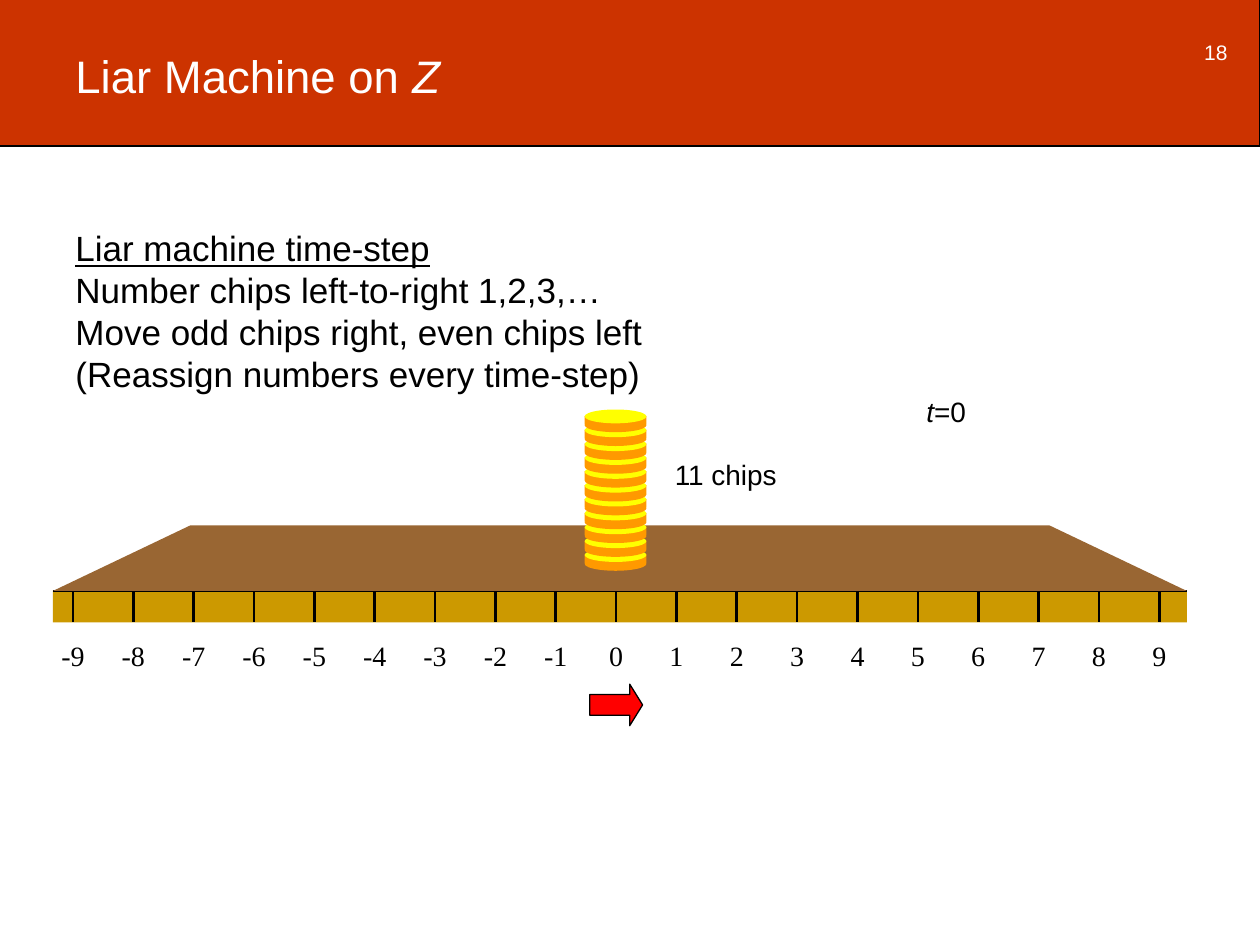
from lxml.etree import SubElement
from pptx import Presentation
from pptx.dml.color import RGBColor
from pptx.enum.shapes import MSO_CONNECTOR, MSO_SHAPE
from pptx.enum.text import MSO_ANCHOR, PP_ALIGN
from pptx.oxml.ns import qn
from pptx.util import Inches, Pt

COLORS = {"banner": "CC3300", "edge": "CC9900", "table": "996633", "chip_side": "FF9900",
          "chip_top": "FFFF00", "arrow": "FF0000", "black": "000000", "white": "FFFFFF"}

presentation = Presentation()
presentation.slide_width, presentation.slide_height = Inches(10), Inches(7.5)
slide = presentation.slides.add_slide(presentation.slide_layouts[6])
shapes = slide.shapes


def paint(shape, fill, outlined=False):
    shape.shadow.inherit = False
    shape.fill.solid()
    shape.fill.fore_color.rgb = RGBColor.from_string(COLORS[fill])
    if outlined:
        shape.line.color.rgb = RGBColor.from_string(COLORS["black"])
        shape.line.width = Pt(0.75)
    else:
        shape.line.fill.background()
    return shape


def add_text(box, lines, size, color="black", font="Arial", align=PP_ALIGN.LEFT,
             anchor=MSO_ANCHOR.TOP, wrap=False):
    """Each line is a list of (text, italic) runs."""
    frame = shapes.add_textbox(*map(Inches, box)).text_frame
    frame.word_wrap = wrap
    frame.vertical_anchor = anchor
    for index, runs in enumerate(lines):
        paragraph = frame.add_paragraph() if index else frame.paragraphs[0]
        paragraph.alignment = align
        paragraph.font.size = Pt(size)
        paragraph.font.name = font
        paragraph.font.color.rgb = RGBColor.from_string(COLORS[color])
        for text, italic in runs:
            run = paragraph.add_run()
            run.text = text
            if italic:
                run.font.italic = True
    return frame


# Banner, title and slide number
banner = shapes.add_shape(MSO_SHAPE.RECTANGLE, Inches(-0.01), Inches(-0.01),
                          Inches(10.01), Inches(1.17))
paint(banner, "banner", outlined=True)
add_text((0.5, 0.33, 7.58, 1), [[("Liar Machine on ", False), ("Z", True)]], 26, "white", wrap=True)
add_text((9.42, 0.15, 0.42, 0.52), [[("18", False)]], 12, "white",
         align=PP_ALIGN.RIGHT, anchor=MSO_ANCHOR.MIDDLE, wrap=True)

# Front edge of the table with its number line
left, right, back, front, bottom = 0.42, 9.42, 4.17, 4.69, 4.94
edge = shapes.add_shape(MSO_SHAPE.RECTANGLE, Inches(left), Inches(front),
                        Inches(right - left), Inches(bottom - front))
paint(edge, "edge")

origin, step = 4.89, 0.479
ticks = [(origin + step * number, number) for number in range(-9, 10)]
rules = [(left, front, right, front)] + [(x, front, x, bottom) for x, number in ticks]
for rule in rules:
    connector = shapes.add_connector(MSO_CONNECTOR.STRAIGHT, *map(Inches, rule))
    connector.line.color.rgb = RGBColor.from_string(COLORS["black"])
    connector.line.width = Pt(1.5)
    SubElement(connector._element.spPr, qn("a:effectLst"))
for x, number in ticks:
    width = 0.41 if number < 0 else 0.33
    add_text((x - width / 2, 5.02, width, 0.4), [[(str(number), False)]], 16,
             font="Times New Roman", align=PP_ALIGN.CENTER)

# Table top
builder = shapes.build_freeform(Inches(right), Inches(front))
builder.add_line_segments([(Inches(x), Inches(y)) for x, y in
                           ((8.33, back), (1.51, back), (left, front))], close=True)
paint(builder.convert_to_shape(), "table")

# Stack of chips, from the bottom up
chip_count, chip_rise = 11, 0.11
chip_parts = [(MSO_SHAPE.RECTANGLE, 0.05, 0.07, "chip_side"),
              (MSO_SHAPE.OVAL, 0.07, 0.11, "chip_side"),
              (MSO_SHAPE.OVAL, 0, 0.11, "chip_top")]
for level in range(chip_count):
    chip_y = 4.35 - chip_rise * level
    for kind, offset, height, color in chip_parts:
        part = shapes.add_shape(kind, Inches(4.64), Inches(chip_y + offset),
                                Inches(0.49), Inches(height))
        paint(part, color)

# Direction arrow
arrow = shapes.add_shape(MSO_SHAPE.RIGHT_ARROW, Inches(4.68), Inches(5.43),
                         Inches(0.42), Inches(0.33))
arrow.adjustments[0], arrow.adjustments[1] = 0.5, 0.31
paint(arrow, "arrow", outlined=True)

# Rules of the time-step
steps = ["Liar machine time-step", "Number chips left-to-right 1,2,3,…",
         "Move odd chips right, even chips left", "(Reassign numbers every time-step)"]
frame = add_text((0.5, 1.75, 4.73, 1.78), [[(text, False)] for text in steps], 20)
frame.paragraphs[0].font.underline = True
for paragraph in frame.paragraphs:
    paragraph.line_spacing = Pt(24)

# Chip count and time labels
add_text((5.25, 3.58, 1.02, 0.37), [[("11 chips", False)]], 16,
         align=PP_ALIGN.CENTER, anchor=MSO_ANCHOR.MIDDLE)
add_text((7.25, 3.08, 0.52, 0.37), [[("t", True), ("=0", False)]], 16, align=PP_ALIGN.CENTER)

presentation.save("out.pptx")
